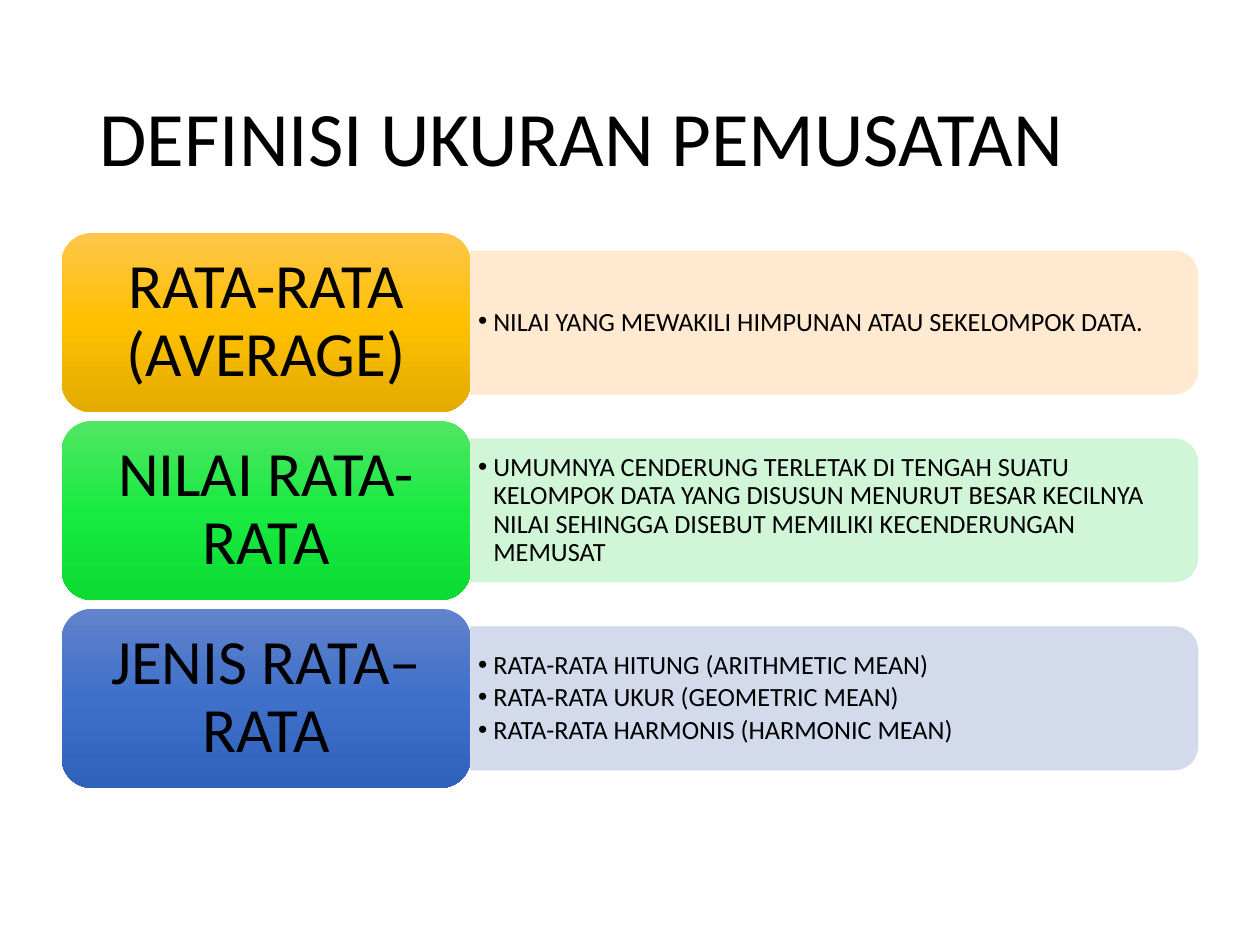
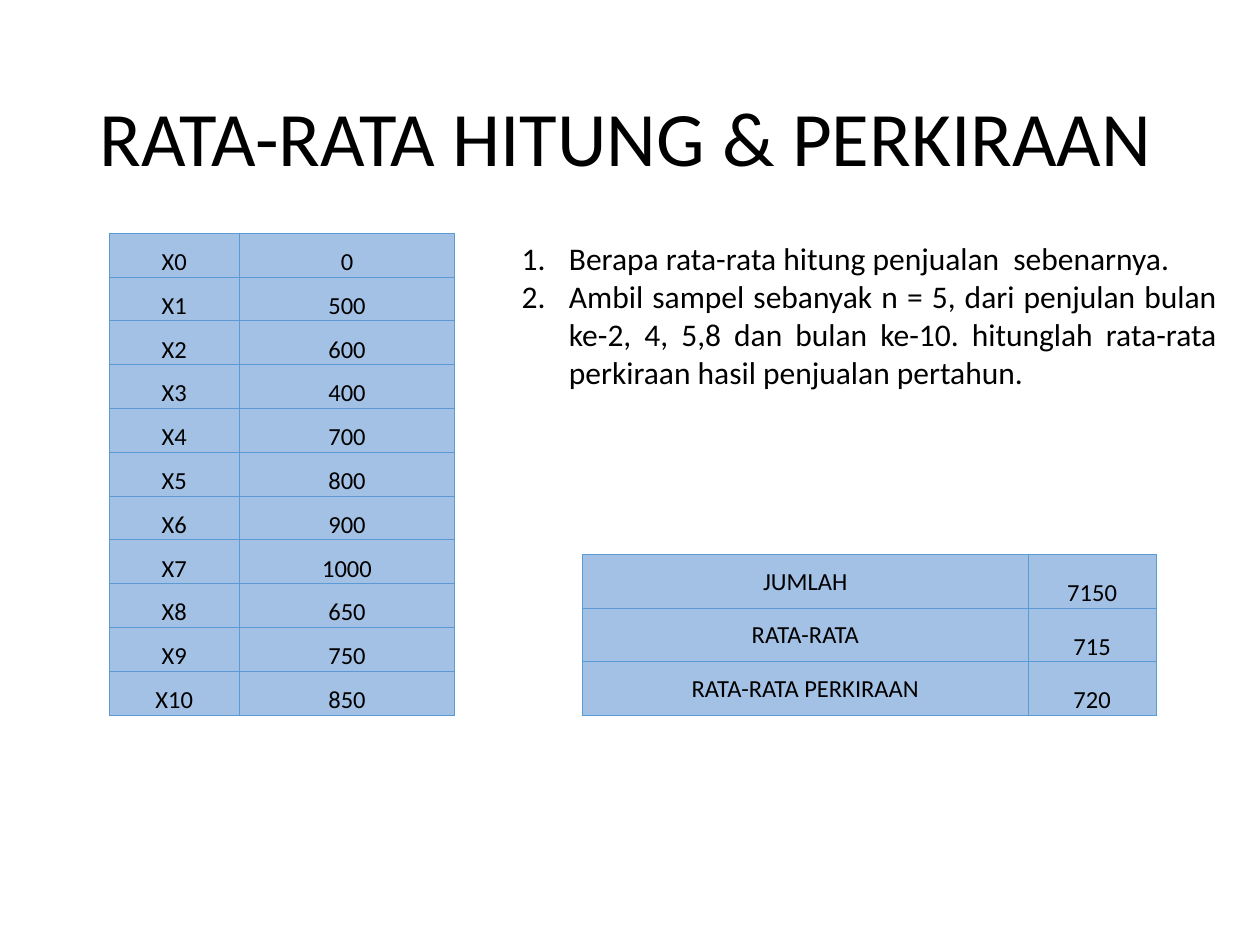
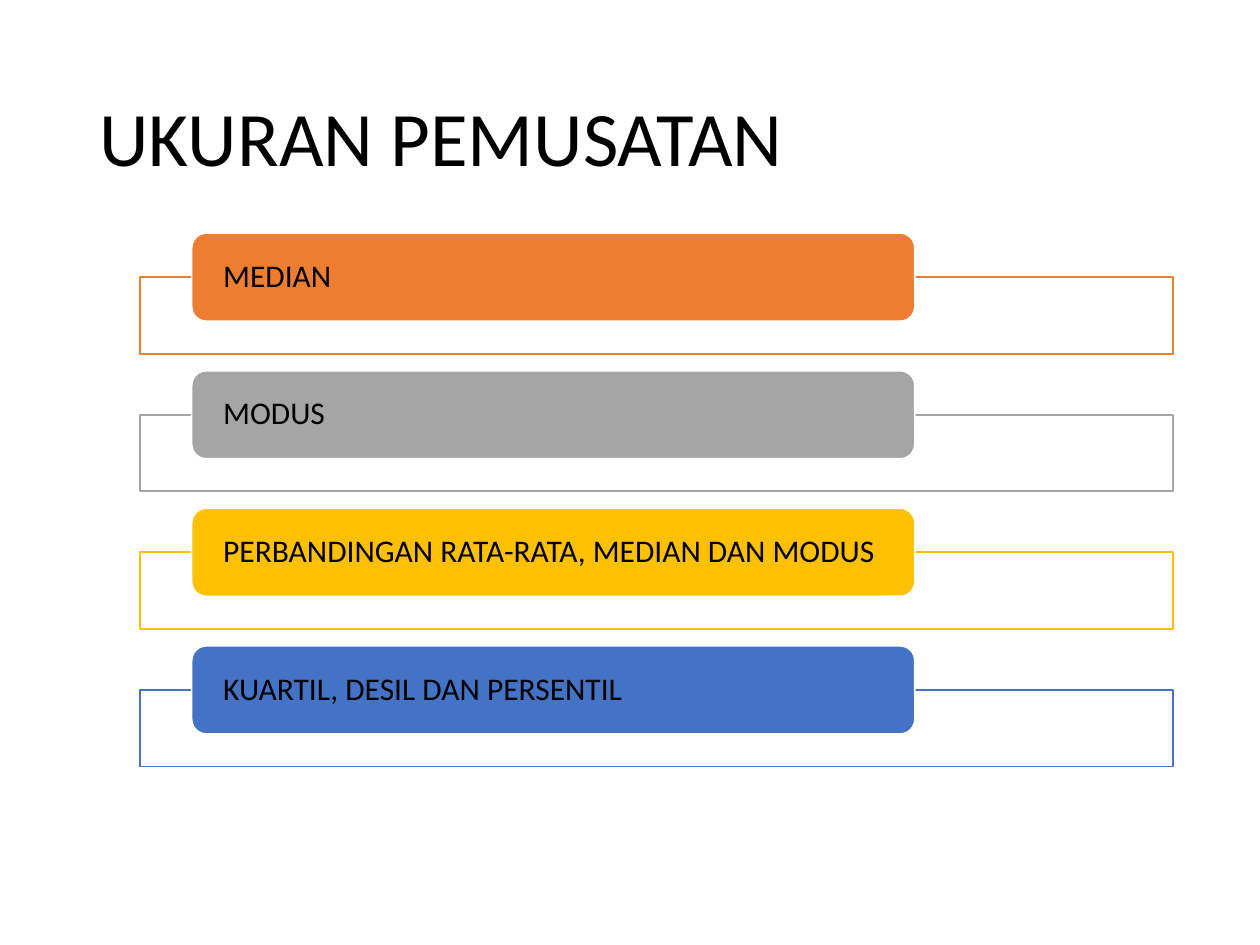
from copy import deepcopy

from lxml import etree
from pptx import Presentation
from pptx.dml.color import RGBColor
from pptx.enum import shapes, text
from pptx.oxml import ns
from pptx.util import Pt

BLACK = RGBColor(0x00, 0x00, 0x00)
WHITE = RGBColor(0xFF, 0xFF, 0xFF)
PEACH = RGBColor(0xFF, 0xE8, 0xCC)
MINT = RGBColor(0xCC, 0xF6, 0xD3)
LAVENDER = RGBColor(0xCF, 0xD6, 0xEA)
AMBERS = RGBColor(0xFF, 0xC6, 0x4B), RGBColor(0xFF, 0xC0, 0x00), RGBColor(0xE3, 0xAB, 0x00)
GREENS = RGBColor(0x51, 0xE6, 0x63), RGBColor(0x19, 0xEA, 0x42), RGBColor(0x0C, 0xDB, 0x34)
BLUES = RGBColor(0x61, 0x83, 0xCB), RGBColor(0x3E, 0x70, 0xCA), RGBColor(0x30, 0x62, 0xBB)
ORANGE = RGBColor(0xED, 0x7D, 0x31)
GRAY = RGBColor(0xA5, 0xA5, 0xA5)
GOLD = RGBColor(0xFF, 0xC0, 0x00)
BLUE = RGBColor(0x44, 0x72, 0xC4)
CELL_FILL = RGBColor(0xA3, 0xC1, 0xE5)
CELL_BORDER = RGBColor(0x5B, 0x9B, 0xD5)

FONT = "Calibri"
TITLE_BOX = (49.7, 28.8, 620.6, 104.4)
CONTENT_TOP = 133.2
DOT = ("buChar", {"char": "•"}, "Arial")
NUMBER = ("buAutoNum", {"type": "arabicPeriod"}, "+mj-lt")
ROUNDED = shapes.MSO_SHAPE.ROUNDED_RECTANGLE

DEFINITIONS = [
    ("RATA-RATA (AVERAGE)", AMBERS, PEACH,
     ["NILAI YANG MEWAKILI HIMPUNAN ATAU SEKELOMPOK DATA."]),
    ("NILAI RATA-RATA", GREENS, MINT,
     ["UMUMNYA CENDERUNG TERLETAK DI TENGAH SUATU KELOMPOK DATA YANG DISUSUN "
      "MENURUT BESAR KECILNYA NILAI SEHINGGA DISEBUT MEMILIKI KECENDERUNGAN MEMUSAT"]),
    ("JENIS RATA–RATA", BLUES, LAVENDER,
     ["RATA-RATA HITUNG (ARITHMETIC MEAN)",
      "RATA-RATA UKUR (GEOMETRIC MEAN)",
      "RATA-RATA HARMONIS (HARMONIC MEAN)"]),
]
SALES = [0, 500, 600, 400, 700, 800, 900, 1000, 650, 750, 850]
RESULTS = [("JUMLAH", 7150), ("RATA-RATA", 715), ("RATA-RATA PERKIRAAN", 720)]
QUESTIONS = [
    "Berapa rata-rata hitung penjualan  sebenarnya.",
    "Ambil sampel sebanyak n = 5, dari penjulan bulan ke-2, 4, 5,8 dan bulan ke-10. "
    "hitunglah rata-rata perkiraan hasil penjualan pertahun.",
]
TOPICS = [
    ("MEDIAN", ORANGE),
    ("MODUS", GRAY),
    ("PERBANDINGAN RATA-RATA, MEDIAN DAN MODUS", GOLD),
    ("KUARTIL, DESIL DAN PERSENTIL", BLUE),
]


def apply(target, values):
    """Set each named attribute of the target."""
    for name, value in values.items():
        setattr(target, name, value)


def points(box):
    """Convert a box of numbers to lengths."""
    return [Pt(round(value, 2)) for value in box]


def margins(horizontal, vertical):
    """Return text frame margins as format values."""
    return {"margin_left": Pt(horizontal), "margin_right": Pt(horizontal),
            "margin_top": Pt(vertical), "margin_bottom": Pt(vertical)}


def add_bullet(paragraph, bullet, indent):
    """Give a paragraph a bullet or number with a hanging indent."""
    tag, attributes, typeface = bullet
    properties = paragraph._p.get_or_add_pPr()
    properties.set("marL", str(Pt(indent)))
    properties.set("indent", str(-Pt(indent)))
    etree.SubElement(properties, ns.qn("a:buFont"), typeface=typeface)
    etree.SubElement(properties, ns.qn("a:" + tag), attributes)


def write_text(frame, lines, size, paragraph_format, frame_format=None, bullet=None, indent=0):
    """Fill a text frame with one paragraph per line."""
    apply(frame, {"word_wrap": True, "auto_size": text.MSO_AUTO_SIZE.NONE, **(frame_format or {})})
    for index, line in enumerate(lines):
        paragraph = frame.paragraphs[0] if index == 0 else frame.add_paragraph()
        paragraph.text = line
        if bullet:
            add_bullet(paragraph, bullet, indent)
        apply(paragraph, {"space_before": Pt(0), **paragraph_format})
        apply(paragraph.font, {"name": FONT, "size": Pt(size)})
        paragraph.font.color.rgb = BLACK


def add_box(slide, kind, box, fill=None, line=None, width=1):
    """Add a flat preset shape with an optional fill and outline."""
    shape = slide.shapes.add_shape(kind, *points(box))
    shape.shadow.inherit = False
    if fill is not None:
        shape.fill.solid()
        shape.fill.fore_color.rgb = fill
    if line is None:
        shape.line.fill.background()
    else:
        shape.line.color.rgb = line
        shape.line.width = Pt(width)
    return shape


def make_translucent(shape):
    """Make the fill and same-coloured outline 90 percent opaque."""
    for color in shape._element.spPr.iter(ns.qn("a:srgbClr")):
        etree.SubElement(color, ns.qn("a:alpha"), val="90000")


def fill_gradient(shape, colors):
    """Fill a shape with evenly spaced colours from top to bottom."""
    shape.fill.gradient()
    shape.fill.gradient_angle = 270
    stop_list = shape._element.spPr.find(".//" + ns.qn("a:gsLst"))
    stop_list.append(deepcopy(stop_list[-1]))
    for index, (stop, color) in enumerate(zip(shape.fill.gradient_stops, colors)):
        stop.color.rgb = color
        stop.position = index / (len(colors) - 1)


def add_titled_slide(presentation, layout_name, title):
    """Add a slide of the named layout with a formatted title."""
    slide = presentation.slides.add_slide(presentation.slide_layouts.get_by_name(layout_name))
    place(slide.shapes.title, TITLE_BOX)
    write_text(slide.shapes.title.text_frame, [title], 44,
               {"alignment": text.PP_ALIGN.LEFT, "line_spacing": 0.9},
               {"vertical_anchor": text.MSO_ANCHOR.MIDDLE})
    return slide


def place(shape, box):
    """Move and size a shape to a box."""
    apply(shape, dict(zip(("left", "top", "width", "height"), points(box))))


def add_definition(slide, box, label, gradient, tint, lines):
    """Add a gradient label with a tinted panel of bullets to its right."""
    left, top, width, height = box
    label_width = 0.36 * width
    panel_left, panel_width, panel_height = left + label_width, width - label_width, 0.8 * height
    middle = top + height / 2
    panel = add_box(slide, shapes.MSO_SHAPE.ROUND_2_SAME_RECTANGLE,
                    (panel_left + (panel_width - panel_height) / 2, middle - panel_width / 2,
                     panel_height, panel_width), tint, tint, 0.5)
    panel.rotation = 90
    make_translucent(panel)
    bullets = slide.shapes.add_textbox(
        *points((panel_left, top + 0.14 * height, panel_width - 4, 0.72 * height)))
    write_text(bullets.text_frame, lines, 15, {"line_spacing": 0.9, "space_after": Pt(2.25)},
               {"vertical_anchor": text.MSO_ANCHOR.MIDDLE, **margins(4.3, 2.2)}, DOT, 8.64)
    heading = add_box(slide, ROUNDED, (left, top, label_width, height))
    fill_gradient(heading, gradient)
    write_text(heading.text_frame, [label], 36,
               {"alignment": text.PP_ALIGN.CENTER, "line_spacing": 0.9},
               {"vertical_anchor": text.MSO_ANCHOR.MIDDLE, **margins(10.8, 5)})


def add_definitions(slide, box):
    """Stack the definitions with gaps of a twentieth of a row."""
    left, top, width, height = box
    count = len(DEFINITIONS)
    row_height = height / (count + 0.05 * (count - 1))
    for index, definition in enumerate(DEFINITIONS):
        add_definition(slide, (left, top + index * 1.05 * row_height, width, row_height),
                       *definition)


def add_cell_borders(cell):
    """Outline all four sides of a cell."""
    properties = cell._tc.get_or_add_tcPr()
    for index, side in enumerate("LRTB"):
        line = etree.Element(ns.qn("a:ln" + side), w=str(Pt(0.5)))
        fill = etree.SubElement(line, ns.qn("a:solidFill"))
        etree.SubElement(fill, ns.qn("a:srgbClr"), val=str(CELL_BORDER))
        properties.insert(index, line)


def add_value_table(slide, box, rows, name_width, name_anchor):
    """Add a two-column table of names and values."""
    width, height = box[2:]
    table = slide.shapes.add_table(len(rows), 2, *points(box)).table
    apply(table, {"first_row": False, "horz_banding": False})
    for column, column_width in zip(table.columns, (name_width, width - name_width)):
        column.width = Pt(column_width)
    for row, values in zip(table.rows, rows):
        row.height = Pt(round(height / len(rows), 2))
        for cell, value, anchor in zip(row.cells, values, (name_anchor, text.MSO_ANCHOR.BOTTOM)):
            cell.fill.solid()
            cell.fill.fore_color.rgb = CELL_FILL
            add_cell_borders(cell)
            apply(cell, {**margins(0.75, 0.75), "margin_bottom": Pt(0), "vertical_anchor": anchor})
            cell.text = str(value)
            paragraph = cell.text_frame.paragraphs[0]
            paragraph.alignment = text.PP_ALIGN.CENTER
            apply(paragraph.font, {"name": FONT, "size": Pt(14)})
            paragraph.font.color.rgb = BLACK


def add_questions(slide, box):
    """Put the numbered questions in the body placeholder."""
    body = slide.placeholders[1]
    place(body, box)
    write_text(body.text_frame, QUESTIONS, 18, {"alignment": text.PP_ALIGN.JUSTIFY},
               {"vertical_anchor": text.MSO_ANCHOR.TOP}, NUMBER, 27)


def add_topic(slide, box, label, color):
    """Add an outlined frame with a filled tab over its top edge."""
    left, top, width, height = box
    tab_height = 50.4
    frame_top = top + tab_height / 2
    frame = add_box(slide, shapes.MSO_SHAPE.RECTANGLE,
                    (left, frame_top, width, top + height - frame_top), WHITE, color)
    frame.line.width = Pt(1)
    tab = add_box(slide, ROUNDED, (left + 0.05 * width, top, 0.7 * width, tab_height),
                  color, WHITE)
    write_text(tab.text_frame, [label], 18,
               {"alignment": text.PP_ALIGN.LEFT, "line_spacing": 0.9},
               {"vertical_anchor": text.MSO_ANCHOR.MIDDLE, **margins(15.6, 0)})


def add_topics(slide, box):
    """Stack the topics at an equal pitch."""
    left, top, width, height = box
    gap = 9.7
    row_height = (height + gap) / len(TOPICS) - gap
    for index, topic in enumerate(TOPICS):
        add_topic(slide, (left, top + index * (row_height + gap), width, row_height), *topic)


def main():
    """Build and save the presentation."""
    presentation = Presentation()
    apply(presentation, {"slide_width": Pt(720), "slide_height": Pt(540)})

    slide = add_titled_slide(presentation, "Title Only", "DEFINISI UKURAN PEMUSATAN")
    add_definitions(slide, (35.3, CONTENT_TOP, 649.1, 317))

    slide = add_titled_slide(presentation, "Title and Content", "RATA-RATA HITUNG & PERKIRAAN")
    sales = [(f"X{month}", amount) for month, amount in enumerate(SALES)]
    add_value_table(slide, (62.3, CONTENT_TOP, 197.5, 275.6), sales, 74.5,
                    text.MSO_ANCHOR.BOTTOM)
    add_questions(slide, (290.9, CONTENT_TOP, 411.8, 94.3))
    add_value_table(slide, (332.8, 316.8, 327.8, 92), RESULTS, 254.8, text.MSO_ANCHOR.MIDDLE)

    slide = add_titled_slide(presentation, "Title Only", "UKURAN PEMUSATAN")
    add_topics(slide, (80, CONTENT_TOP, 590.4, 304.8))

    presentation.save("out.pptx")


if __name__ == "__main__":
    main()
